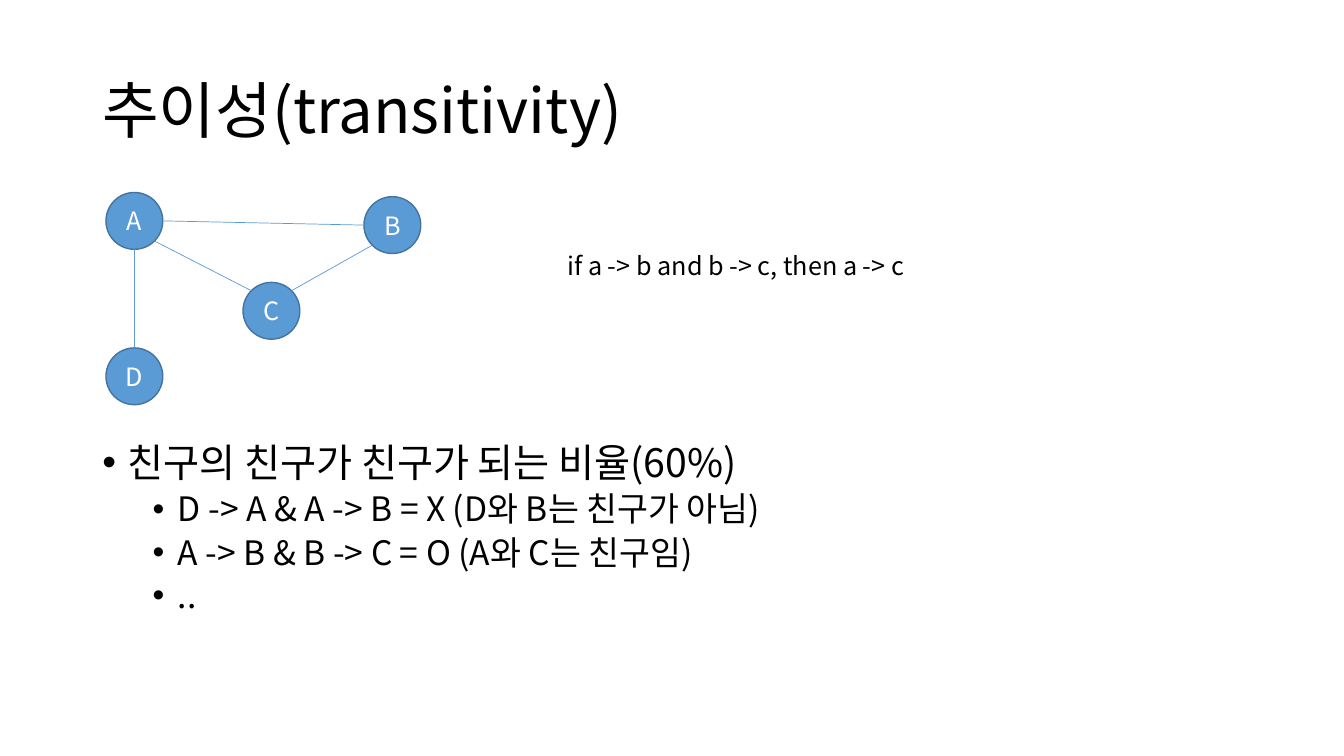
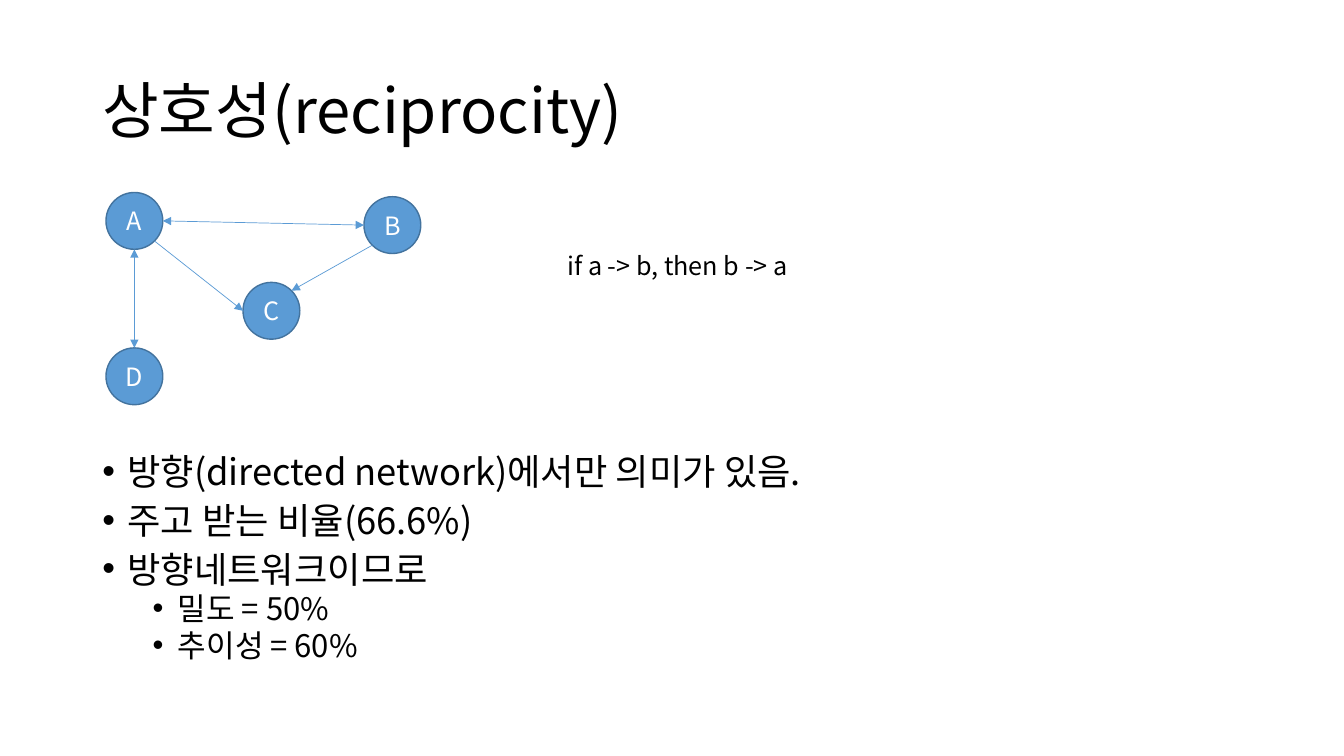
from dataclasses import dataclass
from math import cos, radians, sin

from lxml.etree import SubElement as Sub
from pptx import Presentation
from pptx.dml.color import RGBColor as Rgb
from pptx.enum.shapes import MSO_CONNECTOR as Link, MSO_SHAPE as Shape
from pptx.enum.text import MSO_ANCHOR as Anchor, MSO_AUTO_SIZE as Fit, PP_ALIGN as Align
from pptx.oxml.ns import qn
from pptx.util import Pt


@dataclass(frozen=True)
class Theme:
    font: str = "Noto Sans CJK KR"
    ink: str = "000000"
    pale: str = "FFFFFF"
    blue: str = "5B9BD5"
    edge: str = "43739E"
    title: float = 44
    label: float = 18


THEME = Theme()
WIDE, HIGH = 960, 540
LEFT, SPAN, BASE = 66, 828, 486.7
RADIUS = 20.3
NODES = {"A": (96, 157.8), "B": (280.3, 160.8), "C": (193.9, 222), "D": (96, 268.8)}
SIDES = {"E": 0, "SE": 45, "S": 90, "SW": 135, "W": 180, "N": 270, "NE": 315}

SLIDES = [
    {
        "title": "추이성(transitivity)",
        "rule": "if a -> b and b -> c, then a -> c",
        "width": 285.8,
        "top": 313.2,
        "sizes": (28, 24),
        "lead": 0.9,
        "points": [
            (0, "친구의 친구가 친구가 되는 비율(60%)"),
            (1, "D -> A & A -> B = X (D와 B는 친구가 아님)"),
            (1, "A -> B & B -> C = O (A와 C는 친구임)"),
            (1, ".."),
        ],
        "links": [
            ("C", "NE", "B", "SW", ()),
            ("B", "W", "A", "E", ()),
            ("A", "S", "D", "N", ()),
            ("A", "SE", "C", "NW", ()),
        ],
    },
    {
        "title": "상호성(reciprocity)",
        "rule": "if a -> b, then b -> a",
        "width": 192.2,
        "top": 323.3,
        "sizes": (25.9, 22.2),
        "lead": 0.8,
        "points": [
            (0, "방향(directed network)에서만 의미가 있음."),
            (0, "주고 받는 비율(66.6%)"),
            (0, "방향네트워크이므로"),
            (1, "밀도 = 50%"),
            (1, "추이성 = 60%"),
        ],
        "links": [
            ("A", "SE", "C", "W", ("tailEnd",)),
            ("A", "E", "B", "W", ("headEnd", "tailEnd")),
            ("A", "S", "D", "N", ("headEnd", "tailEnd")),
            ("B", "SW", "C", "NE", ("tailEnd",)),
        ],
    },
]
SIDES["NW"] = 225


def assign(item, values):
    for name, value in values.items():
        setattr(item, name, value)


def write(para, text, size, color=THEME.ink, **style):
    run = para.add_run()
    run.text = text
    assign(run.font, {"name": THEME.font, "size": Pt(size)})
    run.font.color.rgb = Rgb.from_string(color)
    Sub(run.font._element, qn("a:ea"), typeface=THEME.font)
    assign(para, style)


def add_box(slide, x, y, w, h, **style):
    frame = slide.shapes.add_textbox(Pt(x), Pt(y), Pt(w), Pt(h)).text_frame
    assign(frame, {"word_wrap": True, **style})
    return frame


def add_list(slide, page):
    top = page["top"]
    frame = add_box(slide, LEFT, top, SPAN, BASE - top)
    for index, (level, text) in enumerate(page["points"]):
        para = frame.add_paragraph() if index else frame.paragraphs[0]
        write(para, text, page["sizes"][level], level=level,
              line_spacing=page["lead"], space_before=Pt((10, 5)[level]))
        props = para._p.get_or_add_pPr()
        props.set("marL", str(Pt(18 + 36 * level)))
        props.set("indent", str(Pt(-18)))
        Sub(props, qn("a:buFont"), typeface="Arial")
        Sub(props, qn("a:buChar"), char="•")


def add_node(slide, name, x, y):
    node = slide.shapes.add_shape(Shape.OVAL, Pt(x - RADIUS), Pt(y - RADIUS),
                                  Pt(2 * RADIUS), Pt(2 * RADIUS))
    node.shadow.inherit = False
    node.fill.solid()
    node.fill.fore_color.rgb = Rgb.from_string(THEME.blue)
    node.line.color.rgb = Rgb.from_string(THEME.edge)
    node.line.width = Pt(1)
    node.text_frame.vertical_anchor = Anchor.MIDDLE
    write(node.text_frame.paragraphs[0], name, THEME.label, THEME.pale,
          alignment=Align.CENTER)


def find_rim(name, side):
    x, y = NODES[name]
    turn = radians(SIDES[side])
    return Pt(x + RADIUS * cos(turn)), Pt(y + RADIUS * sin(turn))


def add_link(slide, start, out, end, into, heads):
    link = slide.shapes.add_connector(Link.STRAIGHT, *find_rim(start, out),
                                      *find_rim(end, into))
    link.line.color.rgb = Rgb.from_string(THEME.blue)
    link.line.width = Pt(0.5)
    for head in heads:
        Sub(link.line._get_or_add_ln(), qn("a:" + head), type="triangle")
    Sub(link._element.spPr, qn("a:effectLst"))


def add_page(deck, page):
    slide = deck.slides.add_slide(deck.slide_layouts[6])
    title = add_box(slide, LEFT, 28.8, SPAN, 104.4, vertical_anchor=Anchor.MIDDLE)
    write(title.paragraphs[0], page["title"], THEME.title, line_spacing=0.9)
    add_list(slide, page)
    for name, (x, y) in NODES.items():
        add_node(slide, name, x, y)
    for link in page["links"]:
        add_link(slide, *link)
    rule = add_box(slide, 398.2, 175, page["width"], 29, word_wrap=False,
                   auto_size=Fit.SHAPE_TO_FIT_TEXT)
    write(rule.paragraphs[0], page["rule"], THEME.label)


def main():
    deck = Presentation()
    assign(deck, {"slide_width": Pt(WIDE), "slide_height": Pt(HIGH)})
    for page in SLIDES:
        add_page(deck, page)
    deck.save("out.pptx")


if __name__ == "__main__":
    main()
